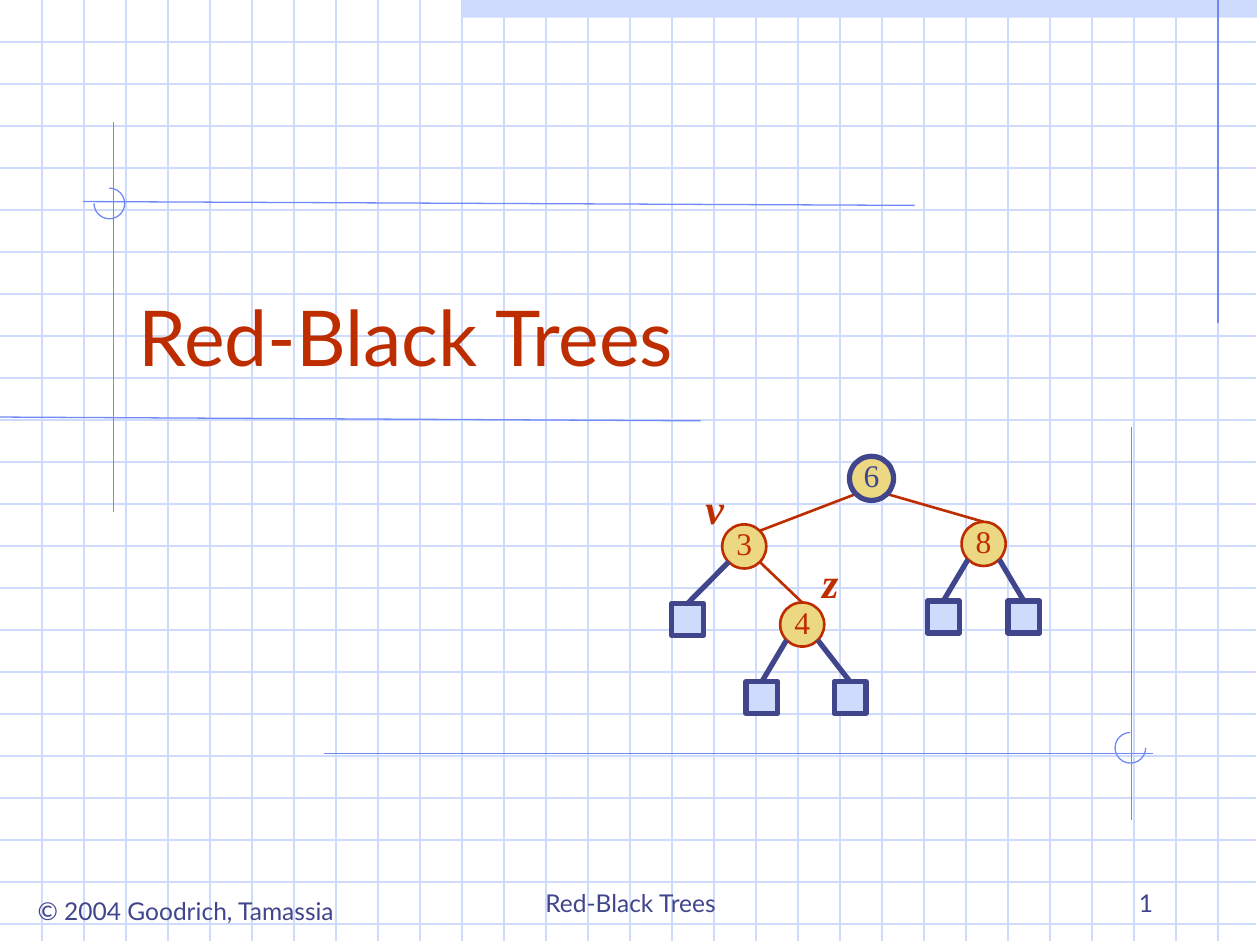
from dataclasses import dataclass

from lxml.etree import SubElement
from pptx import Presentation
from pptx.dml.color import RGBColor as Color
from pptx.enum.shapes import MSO_CONNECTOR as Connector, MSO_SHAPE as Preset
from pptx.enum.text import MSO_ANCHOR as Anchor, PP_ALIGN as Align
from pptx.oxml.ns import qn
from pptx.util import Inches, Pt


@dataclass(frozen=True)
class Theme:
    pale: Color = Color.from_string("CFDBFD")
    rule: Color = Color.from_string("6F89F7")
    ink: Color = Color.from_string("40458C")
    red: Color = Color.from_string("BE2D00")
    gold: Color = Color.from_string("ECD882")
    sans: str = "Lato"
    serif: str = "Times New Roman"
    title: int = 44
    label: int = 24
    key: int = 18
    footer: int = 14
    hairline: float = 0.75
    red_line: float = 1.5
    black_line: float = 3


THEME = Theme()
COLUMNS, ROWS = 30, 22.5
NODE, LEAF, ARC = 1.05, 0.76, 0.73
QUARTER_TURN = 54


def cells(count):
    return Inches(count / 3)


@dataclass
class Box:
    slide: object
    left: float
    top: float
    width: float
    height: float

    def inner(self, left, top, width, height):
        return Box(self.slide, self.left + left, self.top + top, width, height)

    def place(self):
        return [cells(length) for length in (self.left, self.top, self.width, self.height)]


def add_line(box, start, end, color, weight):
    ends = [cells(length) for x, y in (start, end) for length in (box.left + x, box.top + y)]
    line = box.slide.shapes.add_connector(Connector.STRAIGHT, *ends)
    line.line.color.rgb = color
    line.line.width = Pt(weight)
    SubElement(line._element.spPr, qn("a:effectLst"))


def add_preset(box, preset, fill=None, color=None, weight=THEME.hairline):
    shape = box.slide.shapes.add_shape(preset, *box.place())
    shape.shadow.inherit = False
    if fill is None:
        shape.fill.background()
    else:
        shape.fill.solid()
        shape.fill.fore_color.rgb = fill
    if color is None:
        shape.line.fill.background()
    else:
        shape.line.color.rgb = color
        shape.line.width = Pt(weight)
    return shape


def write(shape, text, size, color, font, align, anchor=Anchor.TOP, wrap=True):
    frame = shape.text_frame
    frame.word_wrap = wrap
    frame.vertical_anchor = anchor
    paragraph = frame.paragraphs[0]
    paragraph.text = text
    paragraph.alignment = align
    paragraph.font.size = Pt(size)
    paragraph.font.name = font
    paragraph.font.color.rgb = color
    return paragraph


def add_text(box, *style, **options):
    return write(box.slide.shapes.add_textbox(*box.place()), *style, **options)


def draw_grid(box):
    add_preset(box.inner(11, 0, 18.93, 0.42), Preset.RECTANGLE, THEME.pale)
    right, bottom = box.width - 0.1, box.height - 0.1
    rows = [((0, row), (right, row)) for row in range(1, int(box.height) + 1)]
    columns = [((column, 0), (column, bottom)) for column in range(1, int(box.width))]
    for start, end in rows + columns:
        add_line(box, start, end, THEME.pale, THEME.hairline)


def draw_rules(box):
    for start, end in [
        ((29, 0), (29, 7.68)),
        ((2.7, 2.91), (2.7, 12.18)),
        ((16.68, 10.02), (0, 9.93)),
        ((21.78, 4.89), (1.98, 4.8)),
        ((7.71, 17.94), (27.45, 17.94)),
        ((26.94, 10.17), (26.94, 19.53)),
    ]:
        add_line(box, start, end, THEME.rule, THEME.hairline)
    for left, top, first, last in [(2.24, 4.48, 3, 2), (26.55, 17.44, 0, 3)]:
        arc = add_preset(box.inner(left, top, ARC, ARC), Preset.ARC, color=THEME.rule)
        arc.adjustments[0] = first * QUARTER_TURN
        arc.adjustments[1] = last * QUARTER_TURN


def draw_title(box):
    add_text(box, "Red-Black Trees", THEME.title, THEME.red, THEME.sans, Align.LEFT, Anchor.BOTTOM)


def draw_footer(box):
    style = THEME.footer, THEME.ink, THEME.sans
    add_text(box.inner(0.54, 0.69, 7.77, 1.02), "© 2004 Goodrich, Tamassia", *style,
             Align.CENTER, wrap=False)
    add_text(box.inner(10.26, 0, 9.51, 1.5), "Red-Black Trees", *style, Align.CENTER, Anchor.BOTTOM)
    add_text(box.inner(21.51, 0, 6.24, 1.5), "1", *style, Align.RIGHT, Anchor.BOTTOM)


def draw_node(box, key, x, y, color, weight):
    circle = add_preset(box.inner(x - NODE / 2, y - NODE / 2, NODE, NODE), Preset.OVAL,
                        THEME.gold, color, weight)
    frame = circle.text_frame
    frame.margin_left = frame.margin_right = frame.margin_top = 0
    frame.margin_bottom = Inches(0.05)
    write(circle, key, THEME.key, color, THEME.serif, Align.CENTER, Anchor.MIDDLE, wrap=False)


def draw_tree(box):
    red = THEME.red, THEME.red_line
    black = THEME.ink, THEME.black_line
    nodes = {"6": (4.75, 0.53, black), "3": (1.72, 2.15, red),
             "8": (7.42, 2.09, red), "4": (3.1, 4.01, red)}
    leaves = [("3", -1, 0.37, 3.51), ("8", -1, 6.46, 3.45), ("8", 1, 8.38, 3.45),
              ("4", -1, 2.14, 5.37), ("4", 1, 4.24, 5.37)]

    def port(key, across, down):
        x, y, _ = nodes[key]
        reach = NODE / 2 if across == 0 else NODE / 2 * 0.71
        return x + across * reach, y + down * reach

    for start, end in [
        (port("6", -1, 1), port("3", 1, -1)),
        (port("6", 1, 1), port("8", 0, -1)),
        (port("3", 1, 1), port("4", 0, -1)),
    ]:
        add_line(box, start, end, *red)
    for key, (x, y, style) in nodes.items():
        draw_node(box, key, x, y, *style)
    for parent, side, x, top in leaves:
        add_preset(box.inner(x - LEAF / 2, top, LEAF, LEAF), Preset.RECTANGLE, THEME.pale, *black)
        add_line(box, port(parent, side, 1), (x, top), *black)
    for name, left, top in [("v", 0.5, 0.48), ("z", 3.26, 2.25)]:
        paragraph = add_text(box.inner(left, top, 1.02, 1.5), name, THEME.label, THEME.red,
                             THEME.serif, Align.CENTER)
        paragraph.font.bold = paragraph.font.italic = True


def main():
    presentation = Presentation()
    presentation.slide_width, presentation.slide_height = cells(COLUMNS), cells(ROWS)
    slide = presentation.slides.add_slide(presentation.slide_layouts[6])
    page = Box(slide, 0, 0, COLUMNS, ROWS)
    draw_grid(page)
    draw_rules(page)
    draw_footer(page.inner(0, 20.49, COLUMNS, 2.01))
    draw_title(page.inner(3, 5.49, 25.5, 3.75))
    draw_tree(page.inner(16, 10.86, 8.76, 6.12))
    presentation.save("out.pptx")


if __name__ == "__main__":
    main()
